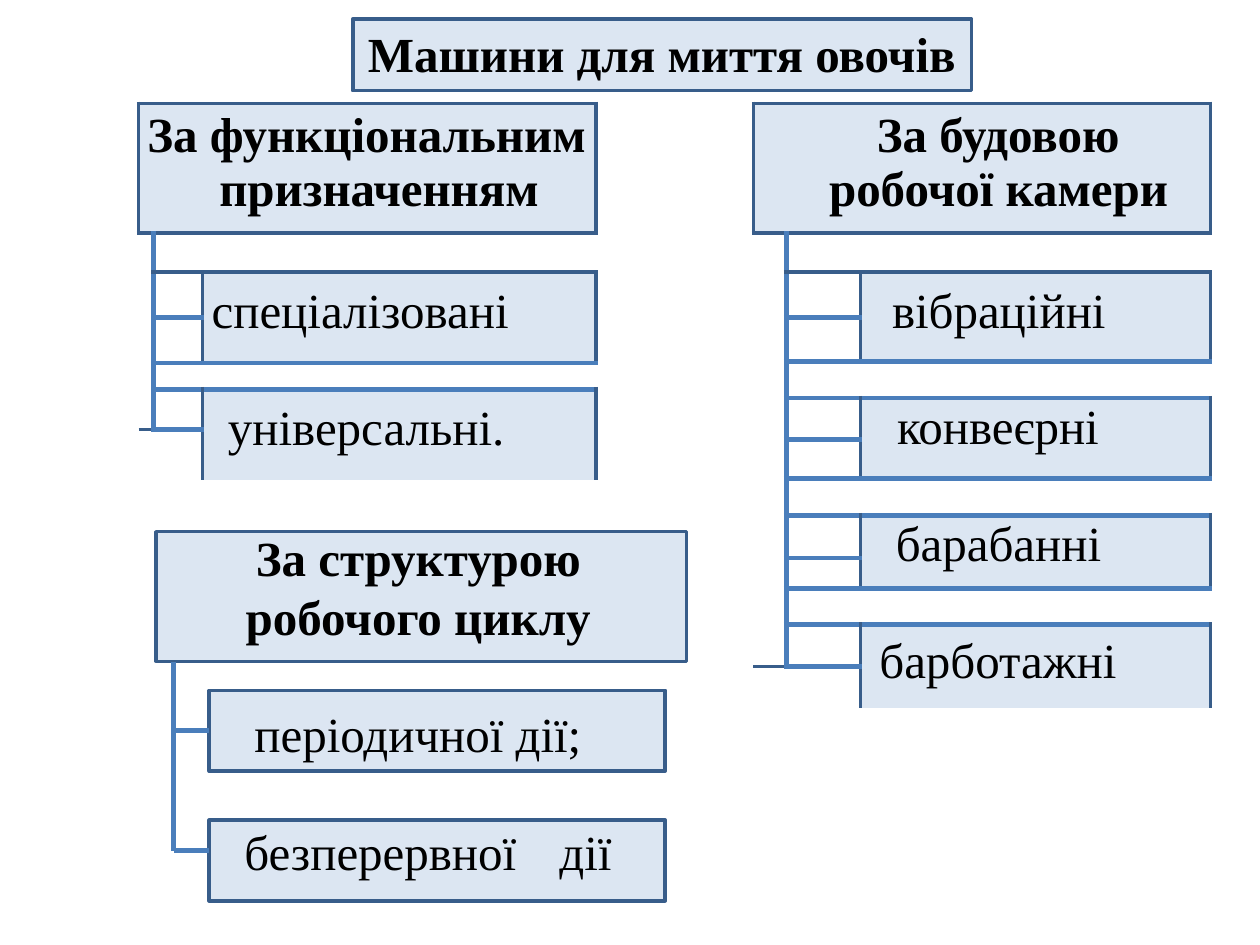
from dataclasses import dataclass

from lxml import etree
from pptx import Presentation
from pptx.dml.color import RGBColor
from pptx.enum.shapes import MSO_CONNECTOR, MSO_SHAPE
from pptx.enum.text import MSO_ANCHOR, MSO_AUTO_SIZE, PP_ALIGN
from pptx.oxml.ns import qn
from pptx.util import Inches, Pt

RECT, STRAIGHT = MSO_SHAPE.RECTANGLE, MSO_CONNECTOR.STRAIGHT
TOP, LEFT, NO_FIT = MSO_ANCHOR.TOP, PP_ALIGN.LEFT, MSO_AUTO_SIZE.NONE
LEFT_SIDE = 1
PLAIN_TABLE = "{2D5ABB26-0587-4C30-8999-92F81FD0307C}"


@dataclass(frozen=True)
class Theme:
    font: str = "Times New Roman"
    size: float = 28
    filler: float = 2
    text: str = "000000"
    fill: str = "DCE6F2"
    border: str = "385D8A"
    branch: str = "4A7EBB"
    box_line: float = 2
    cell_line: float = 2.25
    branch_line: float = 3


T = Theme()
DARK, BLUE = (T.border, T.cell_line), (T.branch, T.branch_line)


def rgb(value):
    return RGBColor.from_string(value)


def write(p, text, bold=False, left=0, first=0):
    """Add one formatted run; left and first are the indents in inches."""
    p.alignment = LEFT
    p.space_before = Pt(0)
    pPr = p._p.get_or_add_pPr()
    pPr.set("marL", str(Inches(left)))
    pPr.set("indent", str(Inches(first)))
    r = p.add_run()
    r.text = text
    r.font.name, r.font.size, r.font.bold = T.font, Pt(T.size), bold
    r.font.color.rgb = rgb(T.text)


def style_box(shape, top_inset):
    shape.fill.solid()
    shape.fill.fore_color.rgb = rgb(T.fill)
    shape.line.color.rgb = rgb(T.border)
    shape.line.width = Pt(T.box_line)
    shape.shadow.inherit = False
    tf = shape.text_frame
    tf.word_wrap, tf.auto_size, tf.vertical_anchor = True, NO_FIT, TOP
    tf.margin_left = tf.margin_right = tf.margin_bottom = 0
    tf.margin_top = Inches(top_inset)
    return tf


def add_box(s, box, top_inset=0.0):
    sp = s.shapes.add_shape(RECT, *map(Inches, box))
    return sp, style_box(sp, top_inset)


def add_branch(s, x1, y1, x2, y2):
    cn = s.shapes.add_connector(STRAIGHT, *map(Inches, (x1, y1, x2, y2)))
    cn.line.color.rgb = rgb(T.branch)
    cn.line.width = Pt(T.branch_line)
    etree.SubElement(cn._element.spPr, qn("a:effectLst"))
    return cn


def add_title(s, box, text):
    title = s.shapes.title
    title.left, title.top, title.width, title.height = map(Inches, box)
    write(style_box(title, 0.04).paragraphs[0], text, bold=True, left=0.12)


def cell_edges(row, col, last):
    """Borders of one tree cell: leaves take two rows, with a gap row above each."""
    if row == 0:
        return dict.fromkeys("LRTB", DARK)
    if col == 0:
        if row == last:
            return {"T": DARK}
        edges = {"R": BLUE}
        if row == 1:
            edges["T"] = DARK
        if row == last - 1:
            edges["B"] = DARK
        return edges
    gap, upper = row % 3 == 1, row % 3 == 2
    if col == 1:
        edges = {} if row == last else {"L": BLUE}
        if gap:
            edges["T"] = DARK if row == 1 else BLUE
            if row == 1:
                edges["B"] = DARK
            return edges
        edges["R"] = DARK
        if upper and row == 2:
            edges["T"] = DARK
        if not upper:
            edges["T"] = BLUE
        if row != last:
            edges["B"] = BLUE
        return edges
    if gap:
        return {"T": DARK if row == 1 else BLUE, "B": DARK}
    edges = {"L": DARK, "R": DARK}
    if upper:
        edges["T"] = DARK
    else:
        edges["B"] = DARK if row == last else BLUE
    return edges


def draw_edges(cell, edges):
    tcPr = cell._tc.get_or_add_tcPr()
    for side in "LRTB":
        if side in edges:
            color, width = edges[side]
            ln = etree.SubElement(tcPr, qn(f"a:ln{side}"), w=str(Pt(width)))
            fill = etree.SubElement(ln, qn("a:solidFill"))
            etree.SubElement(fill, qn("a:srgbClr"), val=color)


def fill_cell(cell, text, top_inset, **style):
    cell.fill.solid()
    cell.fill.fore_color.rgb = rgb(T.fill)
    cell.margin_top = Inches(top_inset)
    write(cell.text_frame.paragraphs[0], text, **style)


def add_table_tree(s, box, cols, rows, header, leaves):
    """Header on top, trunk on the right of column 0, leaves in column 2."""
    last = len(rows) - 1
    tbl = s.shapes.add_table(len(rows), len(cols), *map(Inches, box)).table
    tbl.first_row = tbl.horz_banding = False
    tbl._tbl.tblPr.find(qn("a:tableStyleId")).text = PLAIN_TABLE
    for column, width in zip(tbl.columns, cols):
        column.width = Inches(width)
    for r, height in enumerate(rows):
        tbl.rows[r].height = Inches(height)
        for c in range(len(cols)):
            cell = tbl.cell(r, c)
            cell.margin_left = cell.margin_right = 0
            cell.margin_top = cell.margin_bottom = 0
            draw_edges(cell, cell_edges(r, c, last))
            cell.fill.background()
            if not (r == 0 and c == 0 or c == 2 and r % 3 == 2):
                etree.SubElement(cell.text_frame.paragraphs[0]._p, qn("a:endParaRPr"),
                                 sz=str(int(T.filler * 100)))

    text, left, first = header
    tbl.cell(0, 0).merge(tbl.cell(0, 2))
    fill_cell(tbl.cell(0, 0), text, 0.04, bold=True, left=left, first=first)
    tbl.cell(1, 0).merge(tbl.cell(last - 1, 0))
    tbl.cell(last, 0).merge(tbl.cell(last, 1))
    for i, (text, left, inset) in enumerate(leaves):
        top = 2 + 3 * i
        tbl.cell(top - 1, 1).merge(tbl.cell(top - 1, 2))
        tbl.cell(top, 2).merge(tbl.cell(top + 1, 2))
        fill_cell(tbl.cell(top, 2), text, inset, left=left)


def add_cycle_tree(s, box):
    x, y, w, h = box
    tf = add_box(s, (x, y, w, 1.03))[1]
    p = tf.paragraphs[0]
    write(p, "За структурою", bold=True, left=0.79)
    p.line_spacing = Pt(31.4)
    write(tf.add_paragraph(), "робочого циклу", bold=True, left=0.71)

    trunk, leaf_x, leaf_h = x + 0.14, x + 0.42, 0.64
    leaves = [(y + 1.26, 0.1, "періодичної дії;", 0.36, y + 1.58),
              (y + h - leaf_h, 0.01, "безперервної\tдії", 0.28, y + 2.53)]
    for top, inset, text, left, branch_y in leaves:
        sp, tf = add_box(s, (leaf_x, top, 3.62, leaf_h), inset)
        p = tf.paragraphs[0]
        write(p, text, left=left)
        if "\t" in text:
            tabs = etree.SubElement(p._p.get_or_add_pPr(), qn("a:tabLst"))
            etree.SubElement(tabs, qn("a:tab"), pos=str(Inches(2.63)), algn="l")
        cn = add_branch(s, trunk, branch_y, leaf_x, branch_y)
        if abs(top + leaf_h / 2 - branch_y) < 0.01:
            cn.end_connect(sp, LEFT_SIDE)
    add_branch(s, trunk, y + 1.03, trunk, leaves[-1][-1])


def main():
    prs = Presentation()
    prs.slide_width, prs.slide_height = Inches(10), Inches(7.5)
    s = prs.slides.add_slide(prs.slide_layouts[5])
    add_title(s, (2.8, 0.15, 4.91, 0.57), "Машини для миття овочів")
    add_table_tree(
        s, (5.98, 0.82, 3.63, 4.8), (0.26, 0.59, 2.78),
        (1.03, 0.31, 0.36, 0.35, 0.29, 0.33, 0.31, 0.29, 0.34, 0.24, 0.29, 0.33, 0.33),
        ("За будовою робочої камери", 0.6, 0.38),
        [("вібраційні", 0.25, 0.1), ("конвеєрні", 0.29, 0.02),
         ("барабанні", 0.28, 0.02), ("барботажні", 0.15, 0.08)])
    add_table_tree(
        s, (1.1, 0.82, 3.63, 2.99), (0.12, 0.39, 3.12),
        (1.03, 0.31, 0.36, 0.36, 0.21, 0.32, 0.4),
        ("За функціональним призначенням", 0.64, -0.57),
        [("спеціалізовані", 0.07, 0.1), ("універсальні.", 0.2, 0.1)])
    add_cycle_tree(s, (1.24, 4.22, 4.21, 2.93))
    prs.save("out.pptx")


if __name__ == "__main__":
    main()
